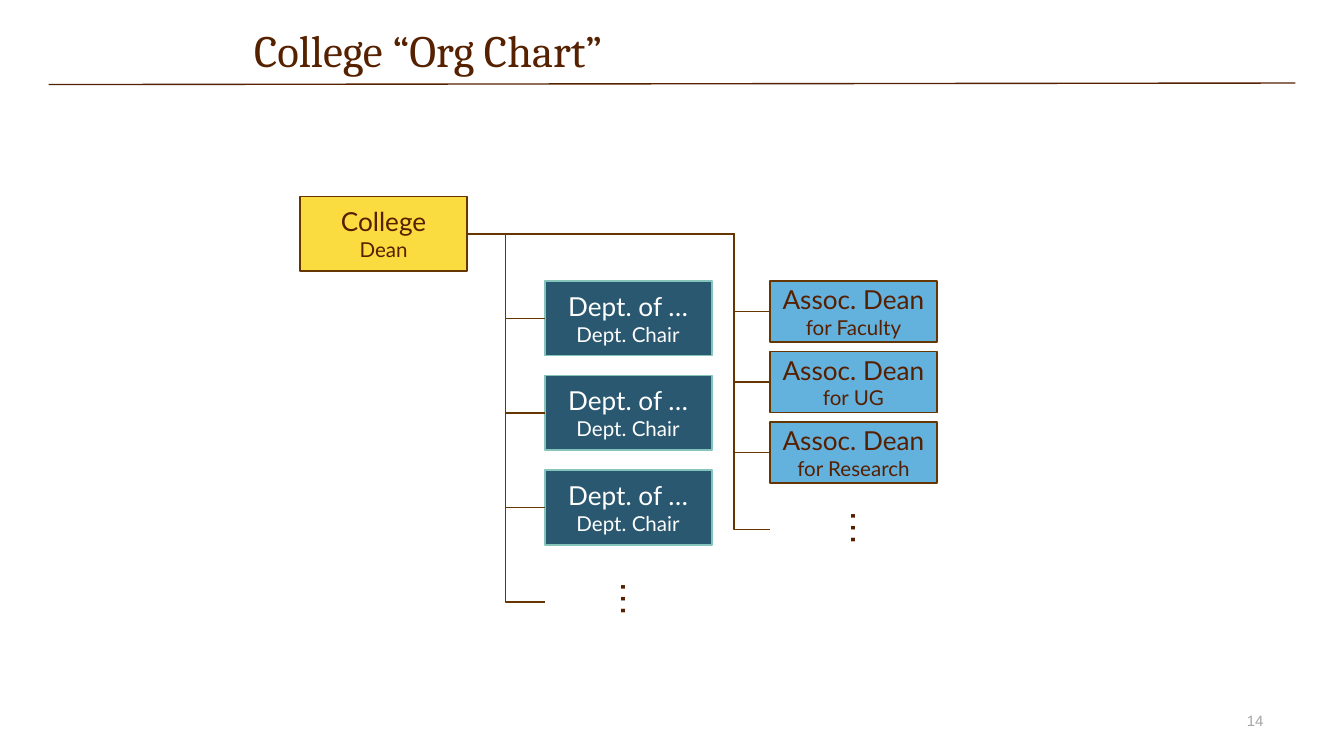
"""Build the college org chart slide."""
from lxml import etree
from pptx import Presentation
from pptx import util as u
from pptx.dml.color import RGBColor
from pptx.enum import shapes, text
from pptx.oxml.ns import qn

BROWN = RGBColor(0x56, 0x21, 0x00)
DARK_BROWN = RGBColor(0x56, 0x1F, 0x00)
OLIVE = RGBColor(0x66, 0x36, 0x00)
YELLOW = RGBColor(0xFA, 0xDC, 0x40)
NAVY = RGBColor(0x2A, 0x58, 0x70)
TEAL = RGBColor(0x84, 0xC4, 0xBB)
SKY = RGBColor(0x63, 0xB1, 0xDD)
GREY = RGBColor(0xA5, 0xA5, 0xA5)
WHITE = RGBColor(0xFF, 0xFF, 0xFF)

BOX_WIDTH = 89.5
TRUNK = (250.25, 125.25)


def add_label(words, left, top, width, height, size, font, color):
    box = page.shapes.add_textbox(u.Pt(left), u.Pt(top), u.Pt(width), u.Pt(height))
    box.text_frame.word_wrap = True
    para = box.text_frame.paragraphs[0]
    para.text = words
    para.font.size = u.Pt(size)
    para.font.name = font
    para.font.color.rgb = color
    return box


def add_line(kind, start, end, color):
    line = page.shapes.add_connector(kind, *[u.Pt(value) for value in (*start, *end)])
    line.line.color.rgb = color
    line.line.width = u.Pt(0.75)
    etree.SubElement(line._element.spPr, qn("a:effectLst"))
    return line


deck = Presentation()
deck.slide_width = u.Pt(720)
deck.slide_height = u.Pt(405)
page = deck.slides.add_slide(deck.slide_layouts[6])

add_line(shapes.MSO_CONNECTOR.STRAIGHT, (26, 45.3), (694, 44.5), BROWN)

number = add_label("14", 516.25, 375.25, 167.75, 21.5, 8, "Arial", GREY)
number.text_frame.vertical_anchor = text.MSO_ANCHOR.MIDDLE
number.text_frame.paragraphs[0].alignment = text.PP_ALIGN.RIGHT

title = add_label("College “Org Chart”", 129, 5, 480, 45.5, 24, "Cambria", BROWN)
title.text_frame.margin_top = title.text_frame.margin_bottom = u.Pt(7.2)

departments = [("Dept. of …", "Dept. Chair")] * 3
deans = [("Assoc. Dean", role) for role in ("for Faculty", "for UG", "for Research")]
groups = [
    ([("College", "Dean")], 160.75, 105.25, 0, 40, YELLOW, OLIVE, DARK_BROWN, None, None),
    (departments, 291.75, 150.5, 50.65, 40, NAVY, TEAL, WHITE, 50000, 322.5),
    (deans, 412.5, 150.5, 37.8, 32.75, SKY, OLIVE, DARK_BROWN, 88200, 283.75),
]

for entries, left, top, step, height, fill, edge, ink, bend, tail in groups:
    ends = []
    for index, (unit, role) in enumerate(entries):
        box_top = top + index * step
        box = page.shapes.add_shape(
            shapes.MSO_SHAPE.RECTANGLE,
            u.Pt(left), u.Pt(box_top), u.Pt(BOX_WIDTH), u.Pt(height))
        box.shadow.inherit = False
        box.fill.solid()
        box.fill.fore_color.rgb = fill
        box.line.color.rgb = edge
        box.line.width = u.Pt(1)
        frame = box.text_frame
        frame.word_wrap = True
        frame.vertical_anchor = text.MSO_ANCHOR.MIDDLE
        frame.margin_left = frame.margin_right = 0
        para = frame.paragraphs[0]
        spans = [para.add_run()]
        if bend:
            para.add_line_break()
            spans.append(para.add_run())
        else:
            spans.append(frame.add_paragraph().add_run())
        for span, words, size in zip(spans, (unit, role), (14, 11)):
            span.text = words
            span.font.size = u.Pt(size)
        for para in frame.paragraphs:
            para.alignment = text.PP_ALIGN.CENTER
            para.font.name = "Lato"
            para.font.color.rgb = ink
        ends.append((box, box_top + height / 2))
    if not bend:
        college = box
        continue
    for target, middle in ends + [(None, tail)]:
        branch = add_line(shapes.MSO_CONNECTOR.ELBOW, TRUNK, (left, middle), OLIVE)
        branch.begin_connect(college, 3)
        if target:
            branch.end_connect(target, 1)
        guides = branch._element.spPr.find(qn("a:prstGeom")).get_or_add_avLst()
        etree.SubElement(guides, qn("a:gd"), name="adj1", fmla=f"val {bend}")

for left, top in ((323.25, 305.25), (446.5, 267.25)):
    dots = add_label("…", left, top, 34.5, 31.5, 20, "Arial", DARK_BROWN)
    dots.rotation = 90
    dots.text_frame.auto_size = text.MSO_AUTO_SIZE.SHAPE_TO_FIT_TEXT

deck.save("out.pptx")
